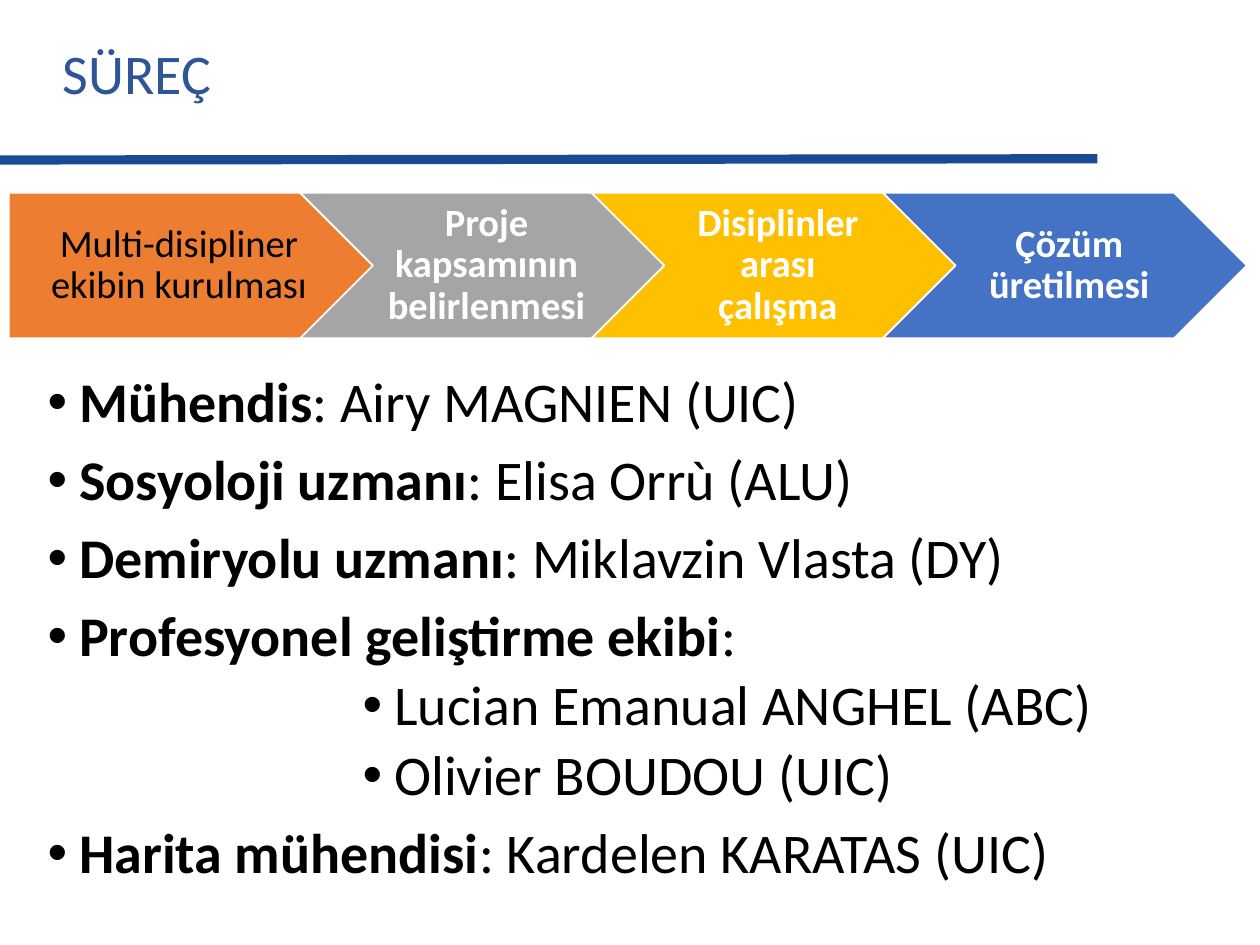
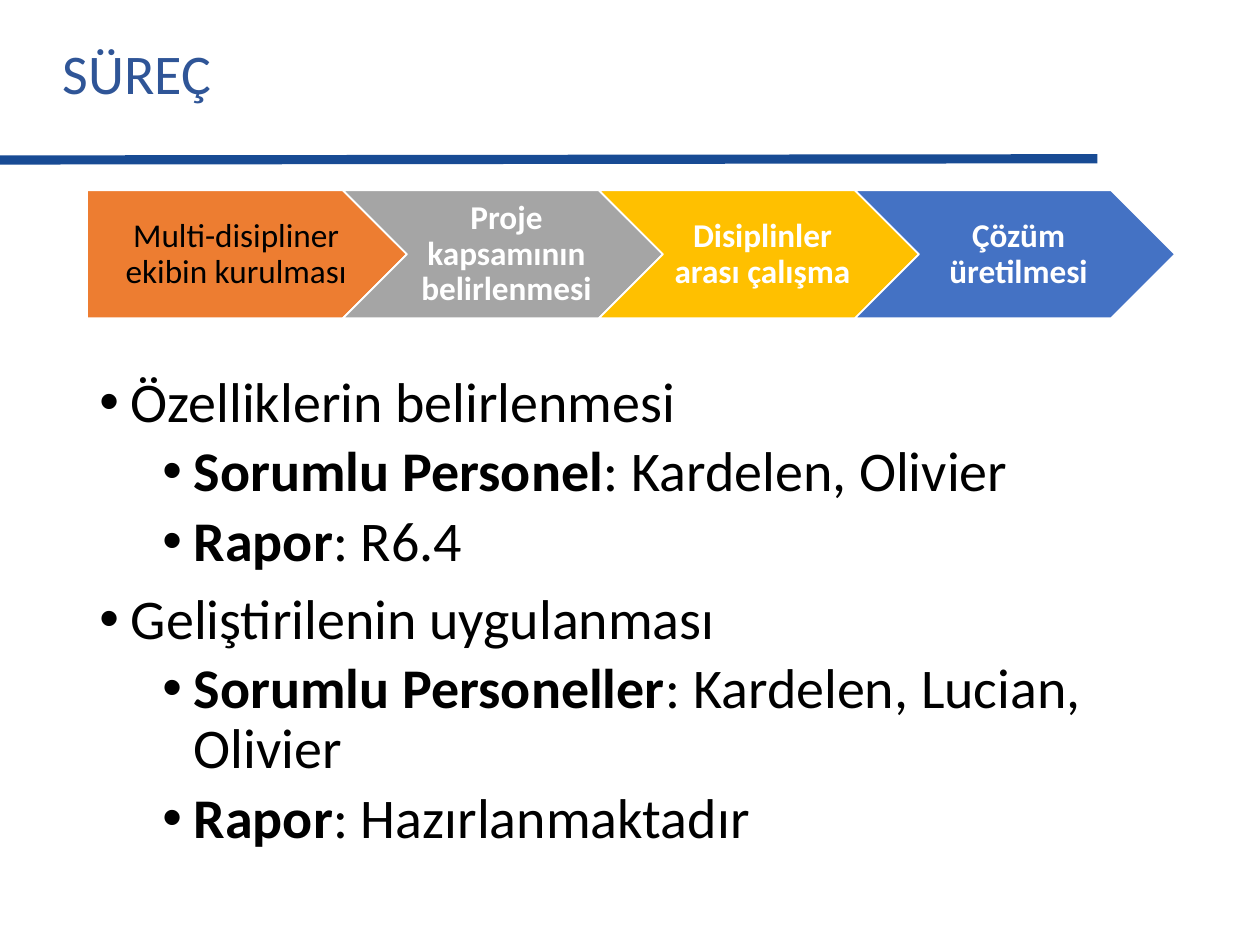
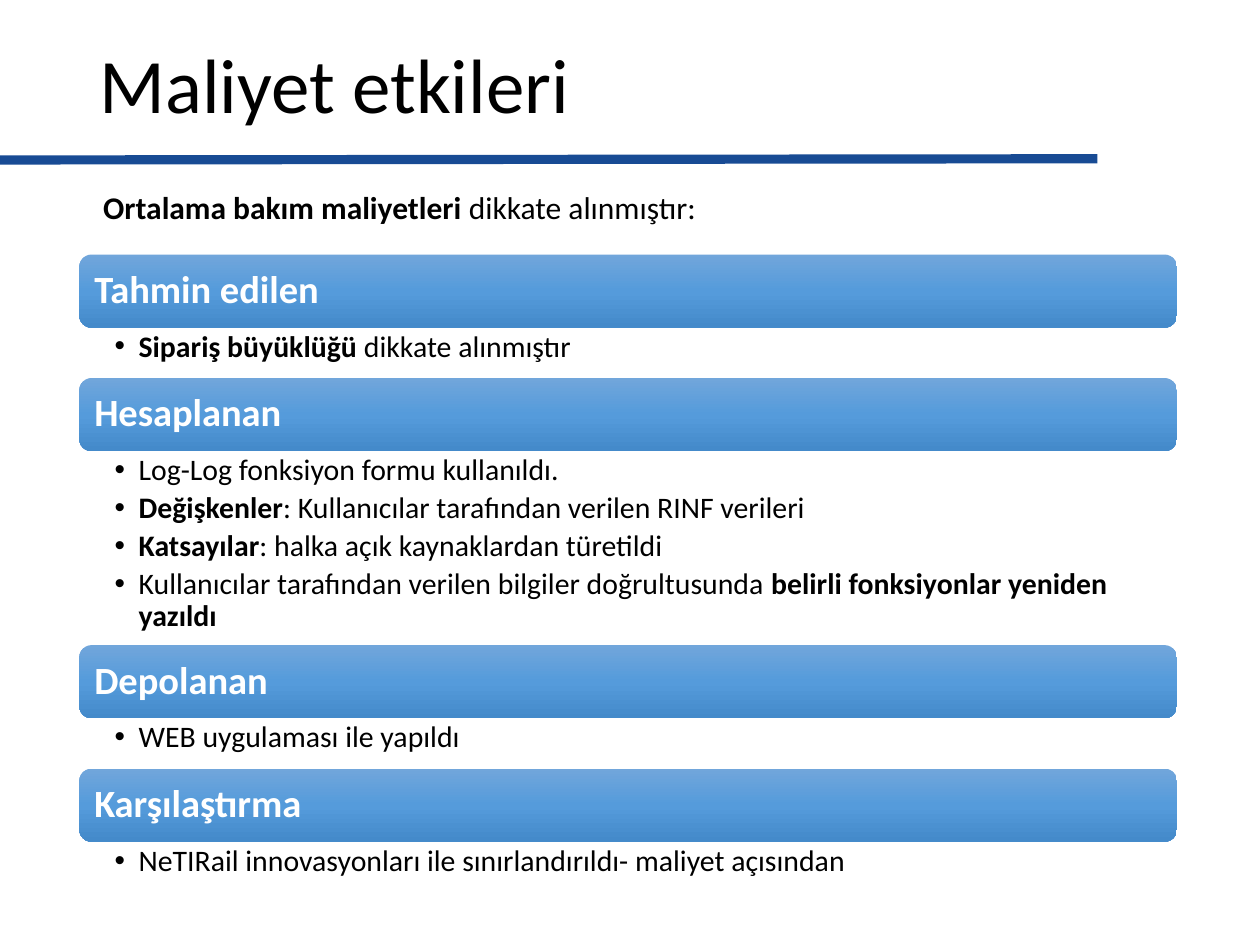
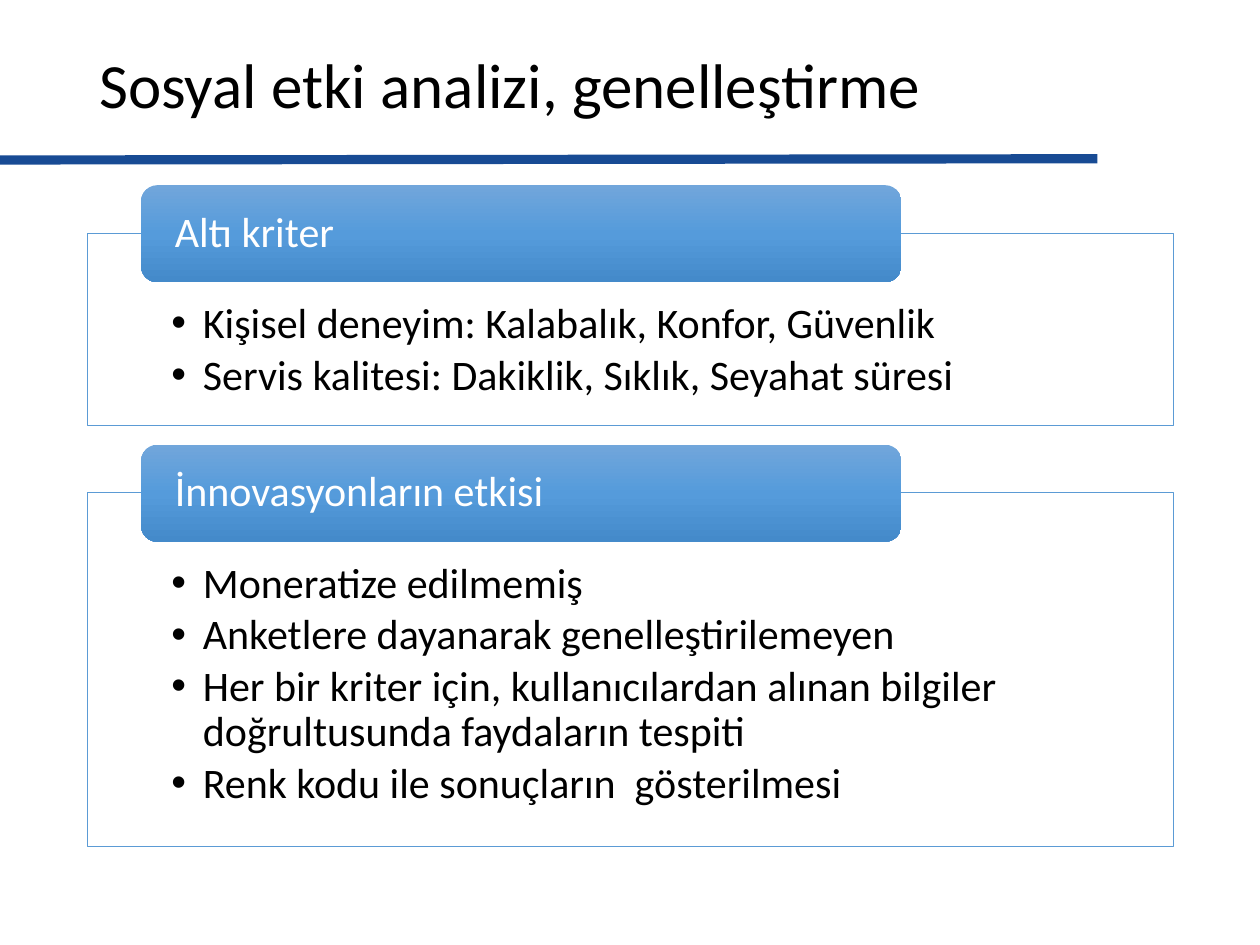
from dataclasses import dataclass
from typing import NamedTuple

from lxml.etree import SubElement
from pptx import Presentation
from pptx.dml.color import RGBColor
from pptx.enum.shapes import MSO_CONNECTOR, MSO_SHAPE
from pptx.enum.text import MSO_ANCHOR, PP_ALIGN
from pptx.oxml import parse_xml
from pptx.oxml.ns import nsdecls, qn
from pptx.util import Inches, Pt


@dataclass(frozen=True)
class Theme:
    font: str = "Calibri"
    black: str = "000000"
    white: str = "FFFFFF"
    rule: str = "184B94"
    process_title: str = "2F5597"
    panel_line: str = "5B9BD5"
    steps: tuple = ("ED7D31", "A5A5A5", "FFC000", "4472C4")
    gradient: tuple = ((0, "71A6DB"), (50, "559BDB"), (100, "448ACA"))
    title_size: int = 44
    long_title_size: int = 36
    body_size: int = 32
    panel_size: int = 24
    heading_size: int = 22
    intro_size: int = 18
    detail_size: int = 17


class Box(NamedTuple):
    left: float
    top: float
    width: float
    height: float

    def inches(self):
        return [Inches(length) for length in self]


THEME = Theme()
DEFAULT_INSETS = (0.1, 0.05, 0.1, 0.05)
STEPS = (
    "Multi-disipliner ekibin kurulması",
    "**Proje kapsamının belirlenmesi**",
    "**Disiplinler arası çalışma**",
    "**Çözüm üretilmesi**",
)
TEAM = (
    (0, "**Mühendis**: Airy MAGNIEN (UIC)"),
    (0, "**Sosyoloji uzmanı**: Elisa Orrù (ALU)"),
    (0, "**Demiryolu uzmanı**: Miklavzin Vlasta (DY)"),
    (0, "**Profesyonel geliştirme ekibi**:"),
    (5, "Lucian Emanual ANGHEL (ABC)"),
    (5, "Olivier BOUDOU (UIC)"),
    (0, "**Harita mühendisi**: Kardelen KARATAS (UIC)"),
)
TASKS = (
    (0, "Özelliklerin belirlenmesi"),
    (1, "**Sorumlu Personel**: Kardelen, Olivier"),
    (1, "**Rapor**: R6.4"),
    (0, "Geliştirilenin uygulanması"),
    (1, "**Sorumlu Personeller**: Kardelen, Lucian, Olivier"),
    (1, "**Rapor**: Hazırlanmaktadır"),
)
COSTS = (
    ("Tahmin edilen", 0.4, ("**Sipariş büyüklüğü **dikkate alınmıştır",)),
    ("Hesaplanan", 1.54, (
        "Log-Log fonksiyon formu kullanıldı.",
        "**Değişkenler**: Kullanıcılar tarafından verilen RINF verileri",
        "**Katsayılar**: halka açık kaynaklardan türetildi",
        "Kullanıcılar tarafından verilen bilgiler doğrultusunda "
        "**belirli fonksiyonlar yeniden yazıldı**",
    )),
    ("Depolanan", 0.4, ("WEB uygulaması ile yapıldı",)),
    ("Karşılaştırma", 0.4, (
        "NeTIRail innovasyonları ile sınırlandırıldı- maliyet açısından",
    )),
)
CRITERIA = (
    ("Altı kriter", 1.53, (
        "Kişisel deneyim: Kalabalık, Konfor, Güvenlik",
        "Servis kalitesi: Dakiklik, Sıklık, Seyahat süresi",
    )),
    ("İnnovasyonların etkisi", 2.81, (
        "Moneratize edilmemiş",
        "Anketlere dayanarak genelleştirilemeyen",
        "Her bir kriter için, kullanıcılardan alınan bilgiler "
        "doğrultusunda faydaların tespiti",
        "Renk kodu ile sonuçların  gösterilmesi",
    )),
)


def apply(target, values):
    for name, value in values.items():
        setattr(target, name, value)


def set_frame(frame, anchor, insets=DEFAULT_INSETS, wrap=True):
    sides = ("margin_left", "margin_top", "margin_right", "margin_bottom")
    apply(frame, dict(zip(sides, map(Inches, insets))))
    apply(frame, {"vertical_anchor": anchor, "word_wrap": wrap})


def write(para, text, size, color=THEME.black, bold=False, **layout):
    apply(para, {"line_spacing": 0.9, "alignment": PP_ALIGN.LEFT, **layout})
    for index, part in enumerate(text.split("**")):
        if part:
            span = para.add_run()
            span.text = part
            apply(span.font, {"name": THEME.font, "size": Pt(size),
                              "bold": bold or index % 2 == 1})
            span.font.color.rgb = RGBColor.from_string(color)


def add_bullet(para, indent, hang):
    properties = para._p.get_or_add_pPr()
    properties.set("marL", str(Inches(indent)))
    properties.set("indent", str(-Inches(hang)))
    SubElement(properties, qn("a:buFont")).set("typeface", "Arial")
    SubElement(properties, qn("a:buChar")).set("char", "•")


def write_list(frame, items, size, hang):
    for index, (level, text, layout) in enumerate(items):
        para = frame.add_paragraph() if index else frame.paragraphs[0]
        add_bullet(para, hang + level * 0.5, hang)
        write(para, text, size, **layout)


def write_details(frame, texts, size, hang, gap):
    items = [(0, text, {"level": 1, "space_after": Pt(gap)}) for text in texts]
    write_list(frame, items, size, hang)


def add_text(page, box, text, size, color=THEME.black,
             anchor=MSO_ANCHOR.MIDDLE, wrap=True):
    frame = page.shapes.add_textbox(*box.inches()).text_frame
    set_frame(frame, anchor, wrap=wrap)
    write(frame.paragraphs[0], text, size, color)


def add_outline(page, body, box):
    shape = page.shapes.add_shape(body, *box.inches())
    shape.shadow.inherit = False
    return shape


def fill_solid(shape, fill, line, line_width):
    shape.fill.solid()
    shape.fill.fore_color.rgb = RGBColor.from_string(fill)
    shape.line.color.rgb = RGBColor.from_string(line)
    shape.line.width = Pt(line_width)


def add_heading(page, box, text, size, insets, bold=False):
    bar = add_outline(page, MSO_SHAPE.ROUNDED_RECTANGLE, box)
    stops = "".join(
        f'<a:gs pos="{place * 1000}"><a:srgbClr val="{color}"/></a:gs>'
        for place, color in THEME.gradient)
    bar._element.spPr.find(qn("a:prstGeom")).addnext(parse_xml(
        f'<a:gradFill {nsdecls("a")} rotWithShape="1"><a:gsLst>{stops}</a:gsLst>'
        '<a:lin ang="5400000" scaled="0"/></a:gradFill>'))
    bar.line.fill.background()
    set_frame(bar.text_frame, MSO_ANCHOR.MIDDLE, insets)
    write(bar.text_frame.paragraphs[0], text, size, THEME.white, bold)


def add_page(deck):
    page = deck.slides.add_slide(deck.slide_layouts[6])
    rule = page.shapes.add_connector(
        MSO_CONNECTOR.STRAIGHT, *map(Inches, (0, 1.27, 8.71, 1.26)))
    rule.line.color.rgb = RGBColor.from_string(THEME.rule)
    rule.line.width = Pt(5.25)
    SubElement(rule._element.spPr, qn("a:effectLst"))
    return page


def add_title(page, text, size):
    add_text(page, Box(0.69, 0.17, 8.62, 1.06), text, size)


def add_process(page, left, top, width, size):
    for index, (text, color) in enumerate(zip(STEPS, THEME.steps)):
        body = MSO_SHAPE.CHEVRON if index else MSO_SHAPE.PENTAGON
        box = Box(left + index * width * 0.8, top, width, width * 0.4)
        step = add_outline(page, body, box)
        fill_solid(step, color, THEME.white, 1)
        inset = (0.1 if index else 0.13) * size / 22
        set_frame(step.text_frame, MSO_ANCHOR.MIDDLE, (inset, 0.06, 0.03, 0.06))
        write(step.text_frame.paragraphs[0], text, size,
              THEME.white if index else THEME.black, alignment=PP_ALIGN.CENTER)


def add_process_page(deck, process, box, entries):
    page = add_page(deck)
    add_text(page, Box(0.4, 0.02, 7.95, 1.17), "SÜREÇ", THEME.body_size,
             THEME.process_title)
    add_process(page, **process)
    frame = page.shapes.add_textbox(*box.inches()).text_frame
    set_frame(frame, MSO_ANCHOR.TOP)
    items = [
        (level, text, {"level": level,
                       "space_before": Pt(0 if not index else 5 if level else 10)})
        for index, (level, text) in enumerate(entries)]
    write_list(frame, items, THEME.body_size, 0.25)


def add_cost_sections(page, box):
    top, bar_height = box.top, 0.58
    for heading, height, texts in COSTS:
        add_heading(page, Box(box.left, top, box.width, bar_height), heading,
                    THEME.heading_size, (0.09,) * 4, bold=True)
        details = Box(box.left, top + bar_height, box.width, height)
        frame = page.shapes.add_textbox(*details.inches()).text_frame
        set_frame(frame, MSO_ANCHOR.TOP, (0.28, 0.03, 0.17, 0.03))
        write_details(frame, texts, THEME.detail_size, 0.19, 3.4)
        top += bar_height + height


def add_cost_page(deck):
    page = add_page(deck)
    add_title(page, "Maliyet etkileri", THEME.title_size)
    add_cost_sections(page, Box(0.63, 2.02, 8.71, 5.05))
    add_text(page, Box(0.72, 1.48, 4.95, 0.4),
             "**Ortalama bakım maliyetleri **dikkate alınmıştır:",
             THEME.intro_size, anchor=MSO_ANCHOR.TOP, wrap=False)


def add_criteria_panels(page, box):
    top = box.top
    for heading, height, texts in CRITERIA:
        panel = add_outline(page, MSO_SHAPE.RECTANGLE,
                            Box(box.left, top, box.width, height))
        fill_solid(panel, THEME.white, THEME.panel_line, 0.5)
        color = panel._element.spPr.find(qn("a:solidFill"))[0]
        SubElement(color, qn("a:alpha")).set("val", "90000")
        set_frame(panel.text_frame, MSO_ANCHOR.TOP, (0.67, 0.55, 0.67, 0.19))
        write_details(panel.text_frame, texts, THEME.panel_size, 0.25, 3.6)
        add_heading(page, Box(box.left + 0.43, top - 0.38, box.width * 0.7, 0.77),
                    heading, THEME.panel_size, (0.23, 0, 0.23, 0))
        top += height + 0.53


def add_criteria_page(deck):
    page = add_page(deck)
    add_title(page, "Sosyal etki analizi, genelleştirme", THEME.long_title_size)
    add_criteria_panels(page, Box(0.69, 1.85, 8.62, 4.87))


def main():
    deck = Presentation()
    apply(deck, {"slide_width": Inches(10), "slide_height": Inches(7.5)})
    add_process_page(deck, {"left": 0.07, "top": 1.53, "width": 2.89, "size": 22},
                     Box(0.28, 2.92, 9.32, 4.2), TEAM)
    add_process_page(deck, {"left": 0.69, "top": 1.51, "width": 2.54, "size": 19},
                     Box(0.69, 2.92, 8.62, 4.05), TASKS)
    add_cost_page(deck)
    add_criteria_page(deck)
    deck.save("out.pptx")


if __name__ == "__main__":
    main()
